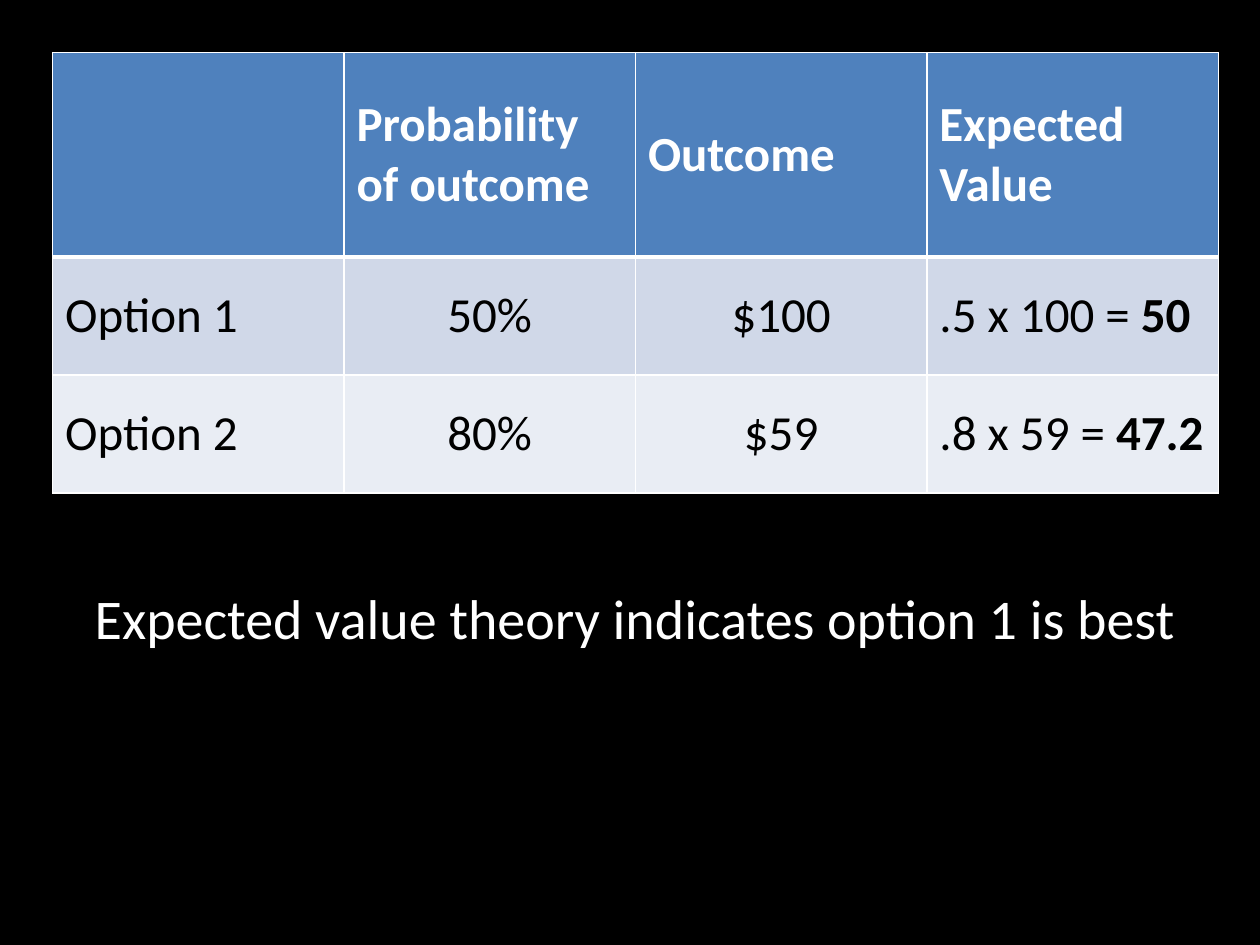
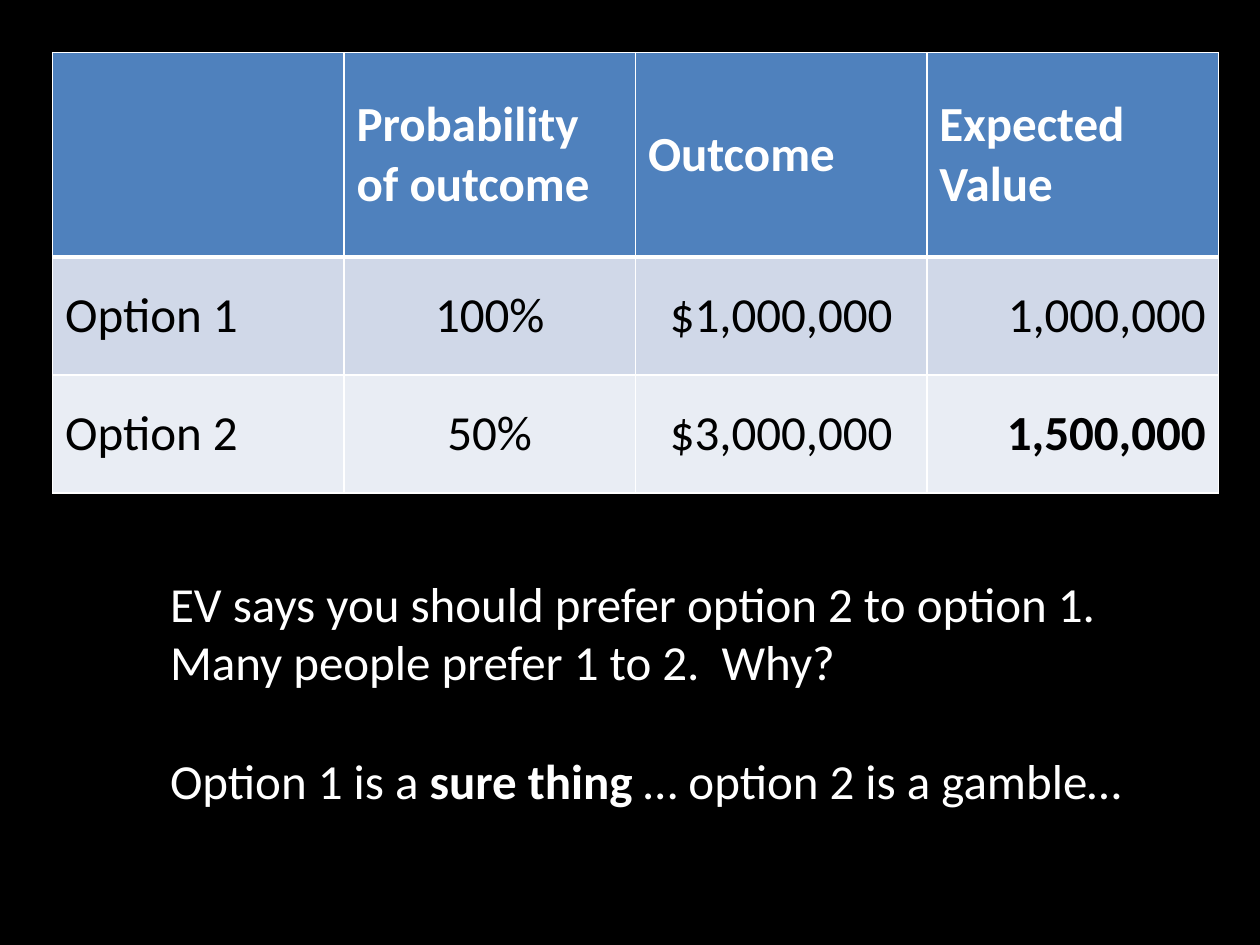
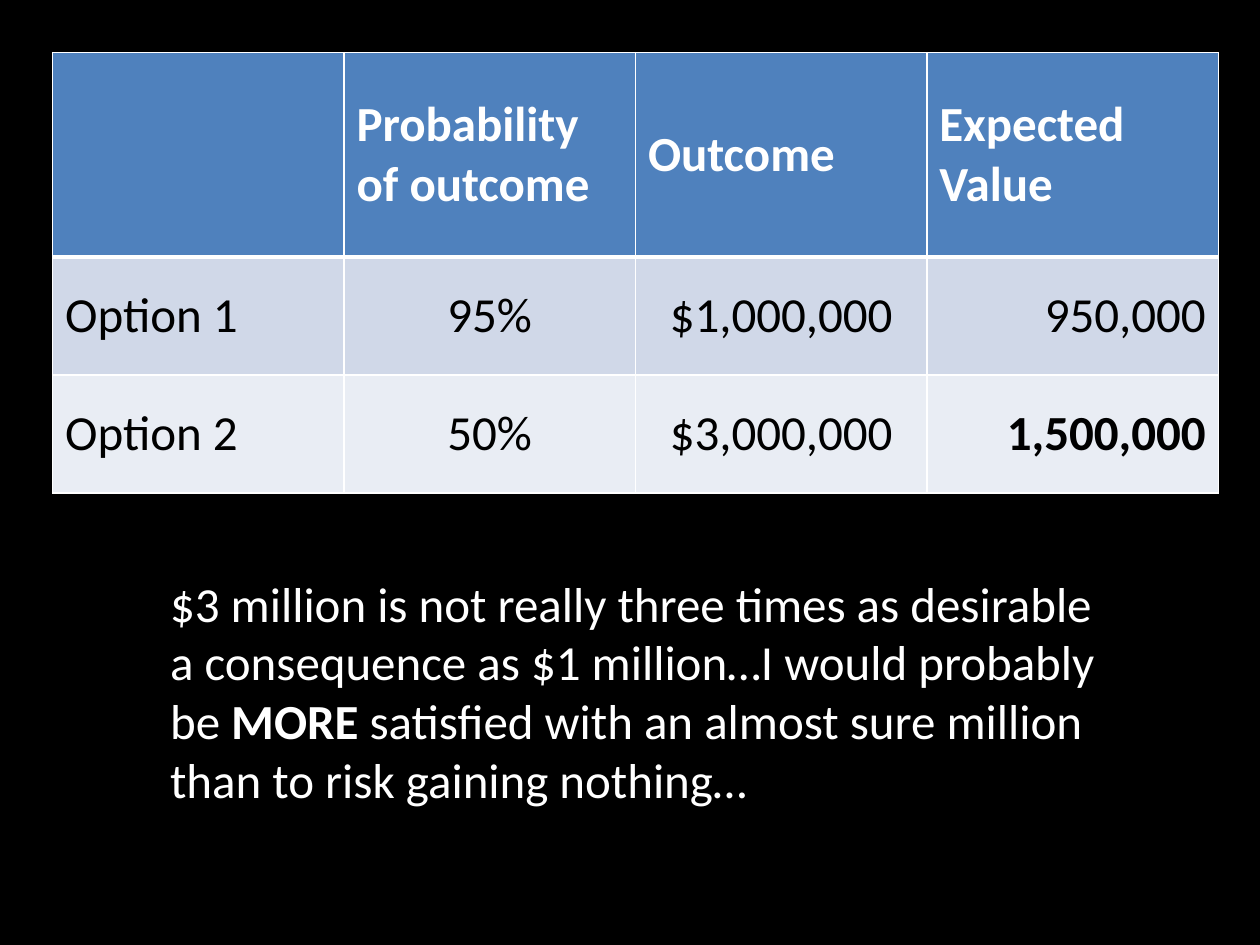
from lxml import etree
from pptx import Presentation
from pptx.dml.color import RGBColor
from pptx.enum.text import MSO_ANCHOR, PP_ALIGN
from pptx.oxml.ns import qn
from pptx.util import Cm, Pt

COLORS = {
    "background": "000000",
    "header": "4F81BD",
    "odd_row": "D0D8E8",
    "even_row": "E9EDF4",
    "light": "FFFFFF",
    "dark": "000000",
}
FONT = "Calibri"
BODY_SIZE = 28
MARGIN = Cm(1.06)
CONTENT_WIDTH = Cm(23.5)
ROW_HEIGHTS = [Cm(4.12), Cm(2.38), Cm(2.38)]
HEADERS = ["", "Probability of outcome", "Outcome", "Expected Value"]
LEFT, CENTER, RIGHT = PP_ALIGN.LEFT, PP_ALIGN.CENTER, PP_ALIGN.RIGHT


def color(name):
    return RGBColor.from_string(COLORS[name])


def write_paragraph(paragraph, text, color_name, size=BODY_SIZE, alignment=LEFT):
    """Write text whose parts between ** marks are bold."""
    paragraph.alignment = alignment
    for index, part in enumerate(text.split("**")):
        if part:
            run = paragraph.add_run()
            run.text = part
            run.font.name = FONT
            run.font.size = Pt(size)
            run.font.bold = index % 2 == 1
            run.font.color.rgb = color(color_name)


def add_border(cell, side, width):
    properties = cell._tc.get_or_add_tcPr()
    line = etree.SubElement(properties, qn(f"a:ln{side}"), w=str(Pt(width)))
    fill = etree.SubElement(line, qn("a:solidFill"))
    etree.SubElement(fill, qn("a:srgbClr"), val=COLORS["light"])


def format_cell(cell, fill_name, top_width, bottom_width):
    for side, width in (("L", 1), ("R", 1), ("T", top_width), ("B", bottom_width)):
        add_border(cell, side, width)
    cell.fill.solid()
    cell.fill.fore_color.rgb = color(fill_name)
    cell.vertical_anchor = MSO_ANCHOR.MIDDLE


def add_options_table(slide, options, value_alignment):
    """Add the header row and one row for each option."""
    shape = slide.shapes.add_table(
        len(ROW_HEIGHTS), len(HEADERS), MARGIN, MARGIN, CONTENT_WIDTH, sum(ROW_HEIGHTS)
    )
    table = shape.table
    for row, height in zip(table.rows, ROW_HEIGHTS):
        row.height = height

    for column, header in enumerate(HEADERS):
        cell = table.cell(0, column)
        format_cell(cell, "header", 1, 3)
        write_paragraph(cell.text_frame.paragraphs[0], f"**{header}**", "light")

    alignments = [LEFT, CENTER, CENTER, value_alignment]
    for number, values in enumerate(options, start=1):
        fill_name = "odd_row" if number % 2 else "even_row"
        texts = [f"Option {number}", *values]
        for column, (text, alignment) in enumerate(zip(texts, alignments)):
            cell = table.cell(number, column)
            format_cell(cell, fill_name, 3 if number == 1 else 1, 1)
            write_paragraph(
                cell.text_frame.paragraphs[0], text, "dark", alignment=alignment
            )


def add_text(slide, box, texts, size=BODY_SIZE, alignment=LEFT):
    text_frame = slide.shapes.add_textbox(*box).text_frame
    text_frame.word_wrap = True
    for index, text in enumerate(texts):
        paragraph = text_frame.paragraphs[0] if index == 0 else text_frame.add_paragraph()
        write_paragraph(paragraph, text, "light", size, alignment)
    return text_frame


def add_options_slide(presentation, options, value_alignment):
    blank_layout = presentation.slide_layouts.get_by_name("Blank")
    slide = presentation.slides.add_slide(blank_layout)
    add_options_table(slide, options, value_alignment)
    return slide


def main():
    presentation = Presentation()
    presentation.slide_width = Cm(25.4)
    presentation.slide_height = Cm(19.05)
    background = presentation.slide_master.background.fill
    background.solid()
    background.fore_color.rgb = color("background")

    slide = add_options_slide(
        presentation,
        [("50%", "$100", ".5 x 100 = **50**"), ("80%", "$59", ".8 x 59 = **47.2**")],
        LEFT,
    )
    add_text(
        slide,
        (MARGIN, Cm(11.64), CONTENT_WIDTH, Cm(1.62)),
        ["Expected value theory indicates option 1 is best"],
        size=32,
        alignment=CENTER,
    )

    gamble = ("50%", "$3,000,000", "**1,500,000**")
    slide = add_options_slide(
        presentation, [("100%", "$1,000,000", "1,000,000"), gamble], RIGHT
    )
    explanation = add_text(
        slide,
        (Cm(3.18), Cm(11.43), Cm(19.9), Cm(7)),
        [
            "EV says you should prefer option 2 to option 1.",
            "Many people prefer 1 to 2.  Why?",
            "Option 1 is a **sure thing **… option 2 is a gamble…",
        ],
    )
    explanation.paragraphs[-1].space_before = Pt(34)

    slide = add_options_slide(
        presentation, [("95%", "$1,000,000", "950,000"), gamble], RIGHT
    )
    add_text(
        slide,
        (Cm(3.18), Cm(11.43), Cm(19.25), Cm(5.82)),
        [
            "$3 million is not really three times as desirable a consequence as "
            "$1 million…I would probably be **MORE **satisfied with an almost sure "
            "million than to risk gaining nothing…"
        ],
    )

    presentation.save("out.pptx")


if __name__ == "__main__":
    main()
